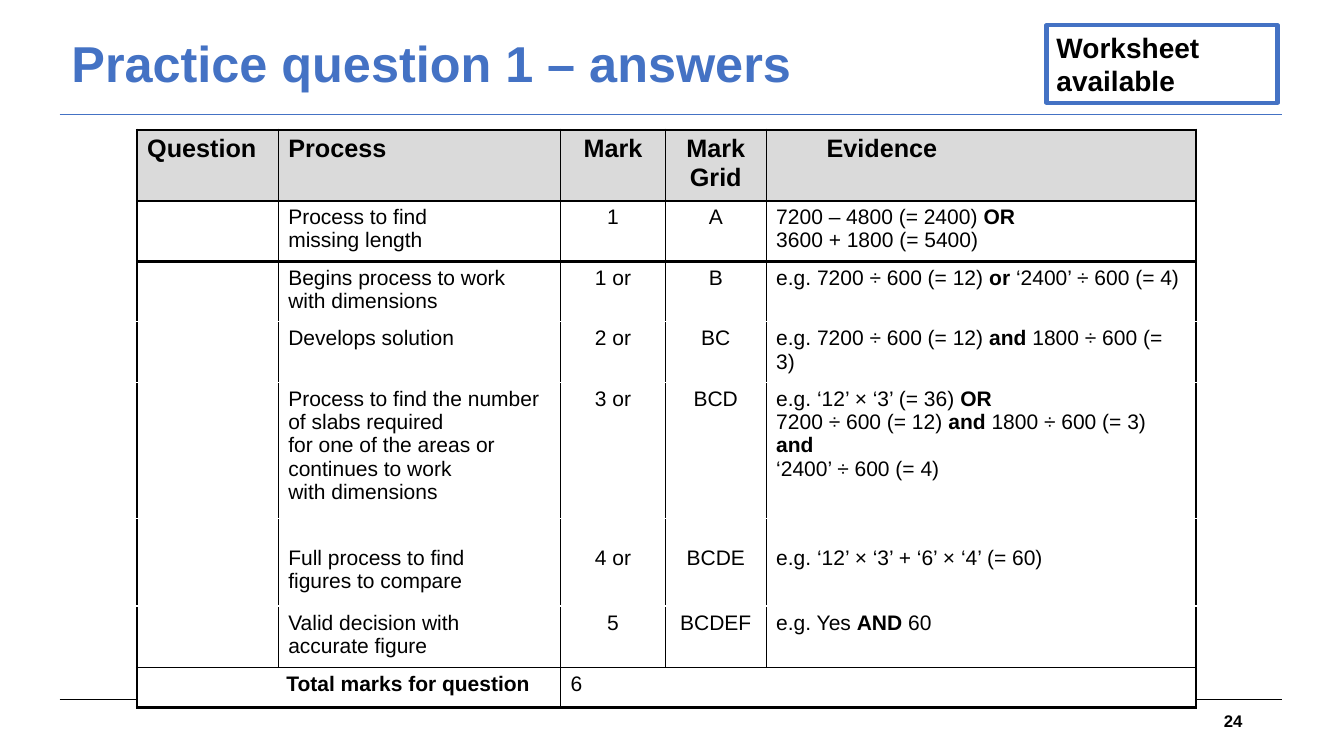
from dataclasses import dataclass
from typing import Optional

import lxml.etree
import pptx
import pptx.dml.color
import pptx.enum.shapes
import pptx.enum.text
import pptx.oxml.ns
import pptx.util

RGBColor = pptx.dml.color.RGBColor
BLACK = RGBColor(0x00, 0x00, 0x00)
WHITE = RGBColor(0xFF, 0xFF, 0xFF)
BLUE = RGBColor(0x44, 0x72, 0xC4)
GREY = RGBColor(0xDA, 0xDA, 0xDA)

ALIGN = pptx.enum.text.PP_ALIGN
ANCHOR = pptx.enum.text.MSO_ANCHOR
WIDE, HIGH = 13.33, 7.5


@dataclass
class Edge:
    color: RGBColor
    points: float


@dataclass
class Row:
    texts: tuple[str, ...]
    height: float
    size: int = 15
    top: float = 0.67


@dataclass
class Label:
    text: str
    left: float
    top: float
    width: float
    height: float
    size: int
    color: RGBColor
    align: ALIGN = ALIGN.LEFT
    anchor: ANCHOR = ANCHOR.MIDDLE
    spacing: float = 1.0
    border: Optional[Edge] = None


THICK = Edge(BLACK, 2.25)
FIRM = Edge(BLACK, 1.5)
FINE = Edge(BLACK, 1)
THIN = Edge(BLACK, 0.75)
GAP = Edge(WHITE, 1)

LABELS = [
    Label("Practice question 1 – answers", 4.58, 1.33, 65.19, 14.8, 36, BLUE, spacing=0.9),
    Label("24", 70.67, 92.67, 22.51, 5.33, 12, BLACK, align=ALIGN.RIGHT),
    Label("Worksheet\navailable", 77.87, 3.33, 17.18, 10.27, 20, BLACK,
          anchor=ANCHOR.TOP, border=Edge(BLUE, 3)),
]

COLUMNS = [10.5, 21.01, 7.8, 7.5, 31.98]
LEVELS = [THICK, FIRM, THICK, GAP, GAP, GAP, GAP, FINE, THICK]
ROWS = [
    Row(("*Question*", "*Process*", "*Mark*", "*Mark Grid*", "*Evidence*"), 9.33, size=18),
    Row(("", "Process to find\nmissing length", "1", "A",
         "7200 – 4800 (= 2400) *OR*\n3600 + 1800 (= 5400)"), 8),
    Row(("", "Begins process to work\nwith dimensions", "1 or", "B",
         "e.g. 7200 ÷ 600 (= 12) *or *‘2400’ ÷ 600 (= 4)"), 8),
    Row(("", "Develops solution", "2 or", "BC",
         "e.g. 7200 ÷ 600 (= 12) *and* 1800 ÷ 600 (= 3)"), 5.33),
    Row(("", "Process to find the number of slabs required\n"
         "for one of the areas or continues to work\nwith dimensions", "3 or", "BCD",
         "e.g. ‘12’ × ‘3’ (= 36) *OR*\n"
         "7200 ÷ 600 (= 12) *and* 1800 ÷ 600 (= 3) *and*\n‘2400’ ÷ 600 (= 4)"), 18),
    Row(("", "Full process to find\nfigures to compare", "4 or", "BCDE",
         "e.g. ‘12’ × ‘3’ + ‘6’ × ‘4’ (= 60)"), 11.6, top=3.73),
    Row(("", "Valid decision with\naccurate figure", "5", "BCDEF", "e.g. Yes *AND *60"), 8.13),
    Row(("*Total marks for question*", "", "6", "", ""), 5.33),
]
LAST = len(ROWS) - 1
INDENTS = {(0, 4): 3.75, (LAST, 0): 10.35}


def across(share: float) -> int:
    return pptx.util.Inches(WIDE * share / 100)


def down(share: float) -> int:
    return pptx.util.Inches(HIGH * share / 100)


def add_run(para, text: str, size: int, color: RGBColor, bold: bool) -> None:
    run = para.add_run()
    run.text = text
    run.font.name = "Arial"
    run.font.size = pptx.util.Pt(size)
    run.font.color.rgb = color
    run.font.bold = bold


def add_label(slide, label: Label) -> None:
    place = (across(label.left), down(label.top), across(label.width), down(label.height))
    if label.border:
        shape = slide.shapes.add_shape(pptx.enum.shapes.MSO_SHAPE.RECTANGLE, *place)
        shape.shadow.inherit = False
        shape.fill.background()
        shape.line.color.rgb = label.border.color
        shape.line.width = pptx.util.Pt(label.border.points)
    else:
        shape = slide.shapes.add_textbox(*place)
    frame = shape.text_frame
    frame.word_wrap = True
    frame.vertical_anchor = label.anchor
    para = frame.paragraphs[0]
    para.alignment = label.align
    para.line_spacing = label.spacing
    for index, line in enumerate(label.text.split("\n")):
        if index:
            para.add_line_break()
        add_run(para, line, label.size, label.color, True)


def add_rule(slide, level: float, color: RGBColor) -> None:
    rule = slide.shapes.add_connector(
        pptx.enum.shapes.MSO_CONNECTOR.STRAIGHT,
        across(4.43), down(level), across(95.42), down(level))
    rule.line.color.rgb = color
    rule.line.width = pptx.util.Pt(0.75)
    lxml.etree.SubElement(rule._element.spPr, pptx.oxml.ns.qn("a:effectLst"))


def add_edge(cell, side: str, edge: Optional[Edge]) -> None:
    name = pptx.oxml.ns.qn
    line = lxml.etree.SubElement(cell._tc.get_or_add_tcPr(), name("a:ln" + side))
    if edge is None:
        lxml.etree.SubElement(line, name("a:noFill"))
        return
    line.set("w", str(pptx.util.Pt(edge.points)))
    fill = lxml.etree.SubElement(line, name("a:solidFill"))
    lxml.etree.SubElement(fill, name("a:srgbClr")).set("val", str(edge.color))


def side_edge(row: int, border: int) -> Optional[Edge]:
    if border in (0, len(COLUMNS)):
        return THICK
    if row < LAST:
        return THIN
    return FINE if border == 2 else None


def fill_cell(cell, row: int, col: int) -> None:
    data = ROWS[row]
    cell.margin_top = down(data.top)
    add_edge(cell, "L", side_edge(row, col))
    add_edge(cell, "R", side_edge(row, col + cell.span_width if cell.is_merge_origin else col + 1))
    add_edge(cell, "T", LEVELS[row])
    add_edge(cell, "B", LEVELS[row + 1])
    cell.fill.solid()
    cell.fill.fore_color.rgb = WHITE if row else GREY
    if not data.texts[col]:
        return
    frame = cell.text_frame
    for index, line in enumerate(data.texts[col].split("\n")):
        para = frame.add_paragraph() if index else frame.paragraphs[0]
        if (row, col) in INDENTS:
            para._p.get_or_add_pPr().set("marL", str(across(INDENTS[row, col])))
        centred = col in (2, 3) and row < LAST
        para.alignment = ALIGN.CENTER if centred else ALIGN.LEFT
        for part, text in enumerate(line.split("*")):
            if text:
                add_run(para, text, data.size, BLACK, part % 2 == 1)


def add_marks(slide) -> None:
    table = slide.shapes.add_table(
        len(ROWS), len(COLUMNS), across(10.2), down(17.2),
        across(sum(COLUMNS)), down(sum(row.height for row in ROWS))).table
    table.first_row = False
    table.horz_banding = False
    for column, width in zip(table.columns, COLUMNS):
        column.width = across(width)
    table.cell(LAST, 0).merge(table.cell(LAST, 1))
    for row, data in enumerate(ROWS):
        table.rows[row].height = down(data.height)
        for col in range(len(COLUMNS)):
            fill_cell(table.cell(row, col), row, col)


def main() -> None:
    deck = pptx.Presentation()
    deck.slide_width = pptx.util.Inches(WIDE)
    deck.slide_height = pptx.util.Inches(HIGH)
    slide = deck.slides.add_slide(deck.slide_layouts[6])
    add_rule(slide, 92.53, BLACK)
    add_rule(slide, 15.2, BLUE)
    for label in LABELS:
        add_label(slide, label)
    add_marks(slide)
    deck.save("out.pptx")


if __name__ == "__main__":
    main()
